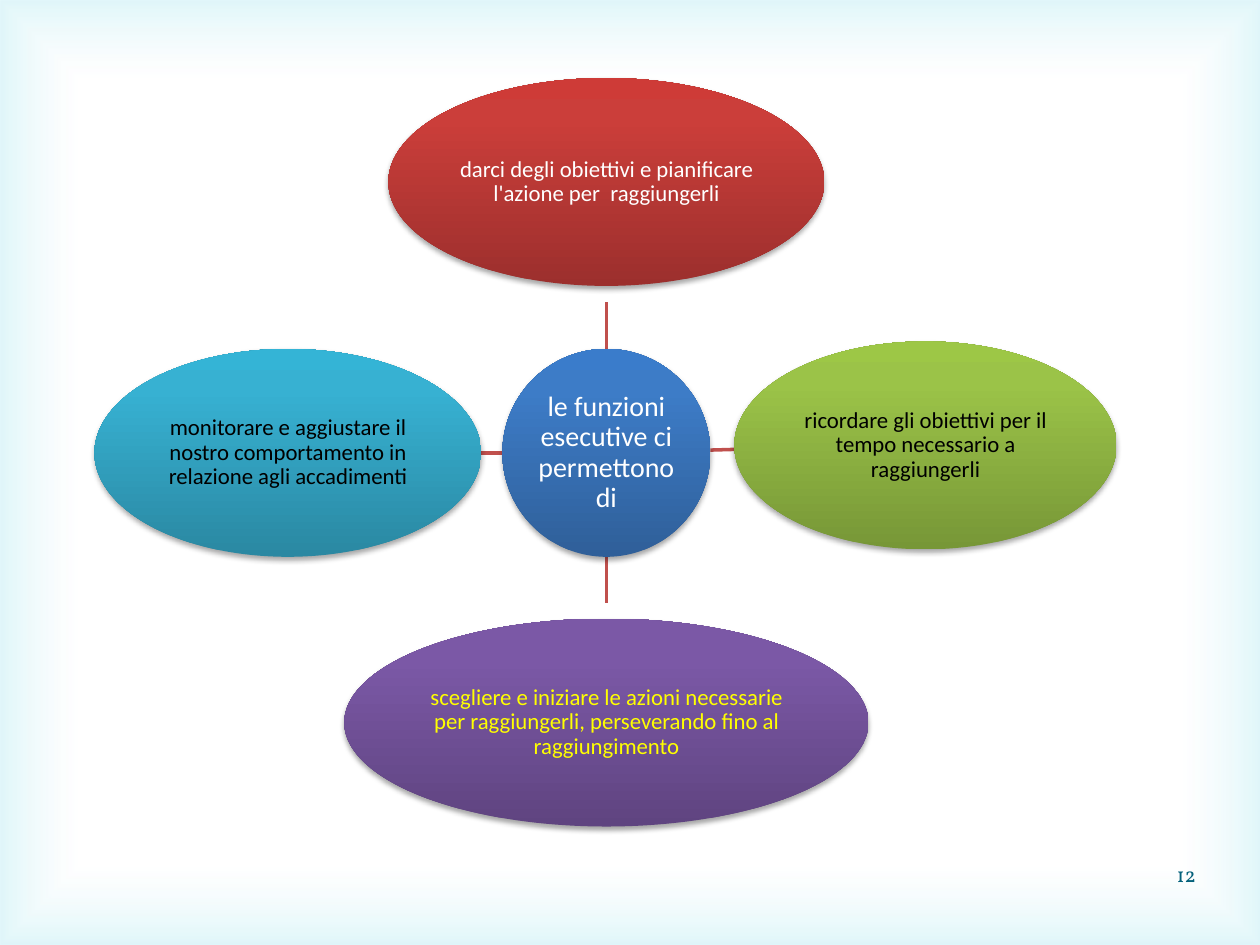
from lxml import etree
from pptx import Presentation
from pptx.dml.color import RGBColor
from pptx.enum.shapes import MSO_CONNECTOR, MSO_SHAPE
from pptx.enum.text import MSO_ANCHOR, PP_ALIGN
from pptx.oxml import parse_xml
from pptx.oxml.ns import nsdecls, qn
from pptx.util import Pt

RECTANGLE, OVAL = MSO_SHAPE.RECTANGLE, MSO_SHAPE.OVAL
STRAIGHT = MSO_CONNECTOR.STRAIGHT
MIDDLE = MSO_ANCHOR.MIDDLE
CENTER, RIGHT = PP_ALIGN.CENTER, PP_ALIGN.RIGHT

WIDTH, HEIGHT = 720, 540
DIAMETER = 118.8
HUB_X, HUB_Y = 346.5, 258.8

COLORS = {
    "white": "FFFFFF", "black": "000000", "yellow": "FFFF00",
    "line": "C0504D", "number": "04617B", "edge": "77D9E8",
}
GRADIENTS = {
    "blue": ("2F5F99", "3D7CC7", "3A7CCB"),
    "red": ("9C2F2D", "CB3E3A", "CE3B37"),
    "green": ("779737", "9BC348", "9DC746"),
    "purple": ("5F4480", "7B58A6", "7C57A8"),
    "cyan": ("2A88A2", "37B1D2", "34B4D6"),
}
UPWARD = '<a:lin ang="16200000" scaled="0"/>'
FROM_CENTER = ('<a:path path="rect"><a:fillToRect l="50000" t="50000" '
               'r="50000" b="50000"/></a:path>')
SHADOW = (f'<a:effectLst {nsdecls("a")}><a:outerShdw blurRad="{Pt(3.1)}" '
          f'dist="{Pt(1.8)}" dir="5400000" rotWithShape="0">'
          '<a:srgbClr val="000000"><a:alpha val="35000"/></a:srgbClr>'
          '</a:outerShdw></a:effectLst>')


class Diagram:
    font = "Calibri"

    def __init__(self, slide):
        self.slide = slide

    def fill_gradient(self, shape, stops, direction):
        """Fill with (position %, colour, opacity %) stops."""
        stop_xml = "".join(
            f'<a:gs pos="{position * 1000}"><a:srgbClr val="{color}">'
            f'<a:alpha val="{opacity * 1000}"/></a:srgbClr></a:gs>'
            for position, color, opacity in stops)
        gradient = parse_xml(f'<a:gradFill {nsdecls("a")} rotWithShape="1">'
                             f'<a:gsLst>{stop_xml}</a:gsLst>{direction}</a:gradFill>')
        shape.fill.background()
        properties = shape._element.spPr
        properties.replace(properties.find(qn("a:noFill")), gradient)
        shape.line.fill.background()

    def background(self):
        shape = self.slide.shapes.add_shape(RECTANGLE, 0, 0, Pt(WIDTH), Pt(HEIGHT))
        shape.shadow.inherit = False
        stops = [(83, COLORS["white"], 11), (100, COLORS["edge"], 23)]
        self.fill_gradient(shape, stops, FROM_CENTER)

    def set_text(self, shape, text, size, color, alignment, font):
        frame = shape.text_frame
        frame.word_wrap = True
        frame.vertical_anchor = MIDDLE
        paragraph = frame.paragraphs[0]
        paragraph.text = text
        paragraph.alignment = alignment
        paragraph.font.size = Pt(size)
        paragraph.font.name = font
        paragraph.font.color.rgb = RGBColor.from_string(COLORS[color])
        return paragraph

    def oval(self, center_x, center_y, width, gradient, text, color, size=13):
        shape = self.slide.shapes.add_shape(
            OVAL, Pt(center_x - width / 2), Pt(center_y - DIAMETER / 2),
            Pt(width), Pt(DIAMETER))
        stops = zip((0, 80, 100), GRADIENTS[gradient], (100, 100, 100))
        self.fill_gradient(shape, stops, UPWARD)
        shape._element.spPr.append(parse_xml(SHADOW))
        frame = shape.text_frame
        frame.margin_left = frame.margin_right = Pt(0.8)
        frame.margin_top = frame.margin_bottom = Pt(0.8)
        paragraph = self.set_text(shape, text, size, color, CENTER, self.font)
        paragraph.line_spacing = 0.9

    def line(self, start, end):
        connector = self.slide.shapes.add_connector(
            STRAIGHT, *(Pt(value) for value in (*start, *end)))
        connector.line.color.rgb = RGBColor.from_string(COLORS["line"])
        connector.line.width = Pt(2)
        etree.SubElement(connector._element.spPr, qn("a:effectLst"))

    def slide_number(self, text):
        box = self.slide.shapes.add_textbox(Pt(522.7), Pt(485.3), Pt(167.8), Pt(28.8))
        self.set_text(box, text, 12, "number", RIGHT, "Vollkorn")


def main():
    presentation = Presentation()
    presentation.slide_width, presentation.slide_height = Pt(WIDTH), Pt(HEIGHT)
    diagram = Diagram(presentation.slides.add_slide(presentation.slide_layouts[6]))
    diagram.background()

    radius = DIAMETER / 2
    spoke = 26.6
    for side in (-1, 1):
        diagram.line((HUB_X, HUB_Y + side * radius),
                     (HUB_X, HUB_Y + side * (radius + spoke)))
    diagram.line((HUB_X + radius, 257.2), (420, 256.8))
    diagram.line((HUB_X - radius, HUB_Y), (274, HUB_Y))

    diagram.oval(HUB_X, HUB_Y, DIAMETER, "blue",
                 "le funzioni esecutive ci permettono di", "white", 16)
    diagram.oval(HUB_X, 104, 249.1, "red",
                 "darci degli obiettivi e pianificare l'azione per  raggiungerli",
                 "white")
    diagram.oval(528.8, 254.5, 218.4, "green",
                 "ricordare gli obiettivi per il tempo necessario a raggiungerli",
                 "black")
    diagram.oval(HUB_X, 412.9, 299.5, "purple",
                 "scegliere e iniziare le azioni necessarie per raggiungerli, "
                 "perseverando fino al raggiungimento", "yellow")
    diagram.oval(164.5, HUB_Y, 221, "cyan",
                 "monitorare e aggiustare il nostro comportamento in relazione "
                 "agli accadimenti", "black")
    diagram.slide_number("12")
    presentation.save("out.pptx")


if __name__ == "__main__":
    main()
